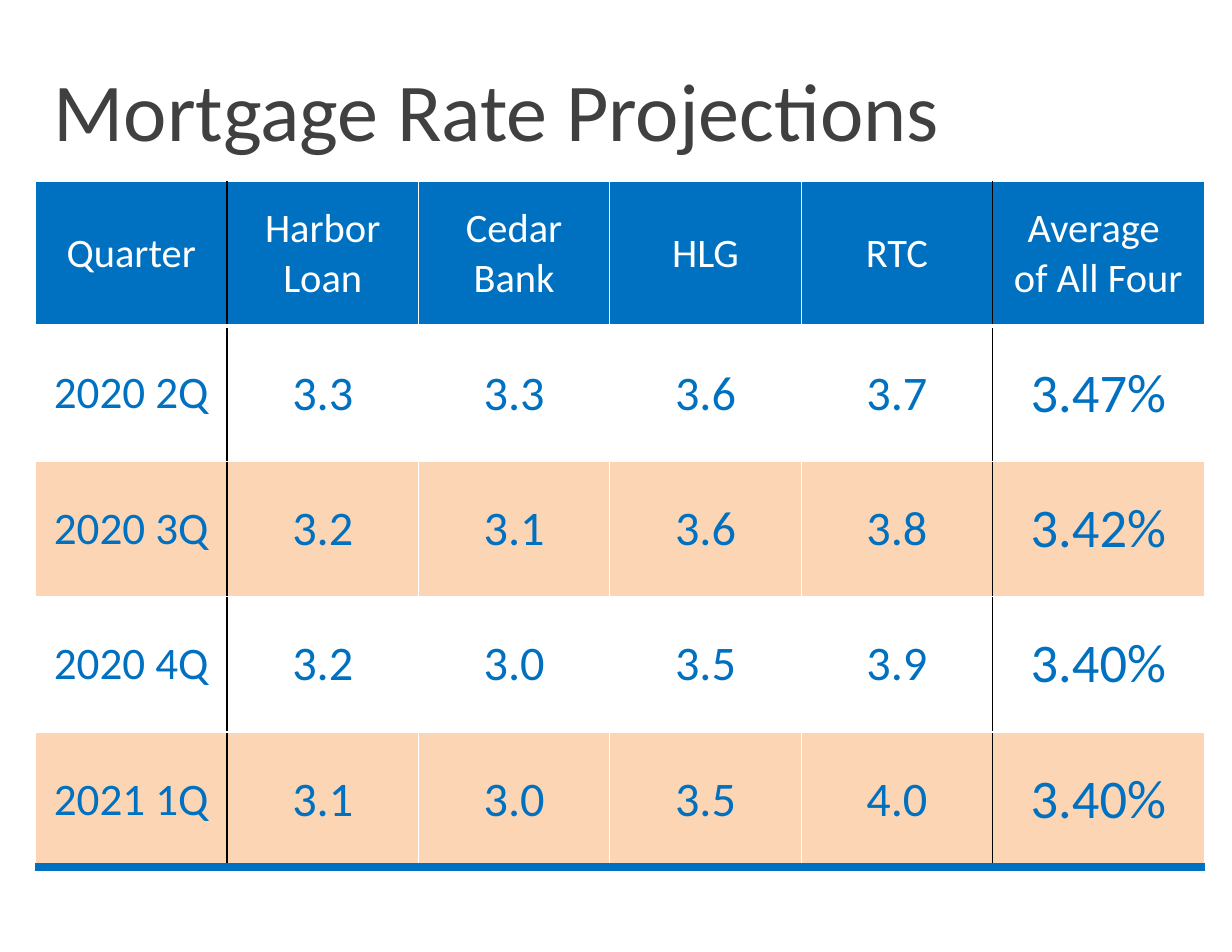
from dataclasses import dataclass

from lxml.etree import SubElement
from pptx import Presentation
from pptx.dml.color import RGBColor
from pptx.enum.text import MSO_ANCHOR, MSO_AUTO_SIZE, PP_ALIGN
from pptx.oxml.ns import qn
from pptx.slide import Slide
from pptx.table import _Cell
from pptx.text.text import _Paragraph
from pptx.util import Cm, Pt

BLUE = RGBColor(0x00, 0x70, 0xC0)
PEACH = RGBColor(0xFC, 0xD5, 0xB5)
WHITE = RGBColor(0xFF, 0xFF, 0xFF)
BLACK = RGBColor(0x00, 0x00, 0x00)
GREY = RGBColor(0x40, 0x40, 0x40)
FONT = "Calibri"
HEADER_SIZE = 26
COLUMN_WIDTHS = [4.34] * 5 + [4.8]
ROW_HEIGHTS = [3.28] + [3.07] * 4
COLUMN_SIZES = [29] + [31] * 4 + [35]
DIVIDED_COLUMNS = (1, 5)


@dataclass(frozen=True)
class Border:
    color: RGBColor
    width: float


@dataclass(frozen=True)
class RateRow:
    quarter: str
    forecasts: tuple[str, ...]
    average: str

    def texts(self) -> list[str]:
        return [self.quarter, *self.forecasts, self.average]


HEADER = RateRow("Quarter", ("Harbor Loan", "Cedar Bank", "HLG", "RTC"), "Average \nof All Four")
RATES = [
    RateRow("2020 2Q", ("3.3", "3.3", "3.6", "3.7"), "3.47%"),
    RateRow("2020 3Q", ("3.2", "3.1", "3.6", "3.8"), "3.42%"),
    RateRow("2020 4Q", ("3.2", "3.0", "3.5", "3.9"), "3.40%"),
    RateRow("2021 1Q", ("3.1", "3.0", "3.5", "4.0"), "3.40%"),
]
THIN_WHITE = Border(WHITE, 1)
THICK_WHITE = Border(WHITE, 3)
DIVIDER = Border(BLACK, 1)
BOTTOM_RULE = Border(BLUE, 6)


def add_text(paragraph: _Paragraph, text: str, size: float, color: RGBColor) -> None:
    run = paragraph.add_run()
    run.text = text
    run.font.name = FONT
    run.font.size = Pt(size)
    run.font.bold = False
    run.font.color.rgb = color


def add_border(cell: _Cell, tag: str, border: Border) -> None:
    properties = cell._tc.get_or_add_tcPr()
    line = SubElement(properties, qn(tag), w=str(Pt(border.width)))
    fill = SubElement(line, qn("a:solidFill"))
    SubElement(fill, qn("a:srgbClr"), val=str(border.color))


def horizontal_border(edge: int) -> Border:
    if edge == len(ROW_HEIGHTS):
        return BOTTOM_RULE
    return THICK_WHITE if edge == 1 else THIN_WHITE


def vertical_border(edge: int) -> Border:
    return DIVIDER if edge in DIVIDED_COLUMNS else THIN_WHITE


def draw_cell(cell: _Cell, row: int, column: int, text: str) -> None:
    add_border(cell, "a:lnL", vertical_border(column))
    add_border(cell, "a:lnR", vertical_border(column + 1))
    add_border(cell, "a:lnT", horizontal_border(row))
    add_border(cell, "a:lnB", horizontal_border(row + 1))
    is_header = row == 0
    cell.fill.solid()
    cell.fill.fore_color.rgb = BLUE if is_header else (WHITE if row % 2 else PEACH)
    cell.vertical_anchor = MSO_ANCHOR.MIDDLE
    cell.margin_left = cell.margin_right = Cm(0.28)
    cell.margin_top = cell.margin_bottom = Cm(0.18)
    size = HEADER_SIZE if is_header else COLUMN_SIZES[column]
    for index, line in enumerate(text.split("\n")):
        frame = cell.text_frame
        paragraph = frame.add_paragraph() if index else frame.paragraphs[0]
        paragraph.alignment = PP_ALIGN.CENTER
        add_text(paragraph, line, size, WHITE if is_header else BLUE)


def draw_title(slide: Slide, title: str) -> None:
    shape = slide.shapes.add_textbox(Cm(0.97), Cm(1.22), Cm(24.2), Cm(2.51))
    shape.text_frame.word_wrap = True
    shape.text_frame.auto_size = MSO_AUTO_SIZE.SHAPE_TO_FIT_TEXT
    add_text(shape.text_frame.paragraphs[0], title, 52.8, GREY)


def draw_rates(slide: Slide, rows: list[RateRow]) -> None:
    table = slide.shapes.add_table(
        len(rows), len(COLUMN_WIDTHS), Cm(0.81), Cm(4.11),
        Cm(sum(COLUMN_WIDTHS)), Cm(sum(ROW_HEIGHTS)),
    ).table
    for column, width in zip(table.columns, COLUMN_WIDTHS):
        column.width = Cm(width)
    for index, (rate_row, height) in enumerate(zip(rows, ROW_HEIGHTS)):
        table.rows[index].height = Cm(height)
        for column, text in enumerate(rate_row.texts()):
            draw_cell(table.cell(index, column), index, column, text)


def main() -> None:
    """Build the mortgage rate projections slide."""
    presentation = Presentation()
    presentation.slide_width = Cm(27.94)
    presentation.slide_height = Cm(21.59)
    slide = presentation.slides.add_slide(presentation.slide_layouts[6])
    draw_title(slide, "Mortgage Rate Projections")
    draw_rates(slide, [HEADER, *RATES])
    presentation.save("out.pptx")


if __name__ == "__main__":
    main()
